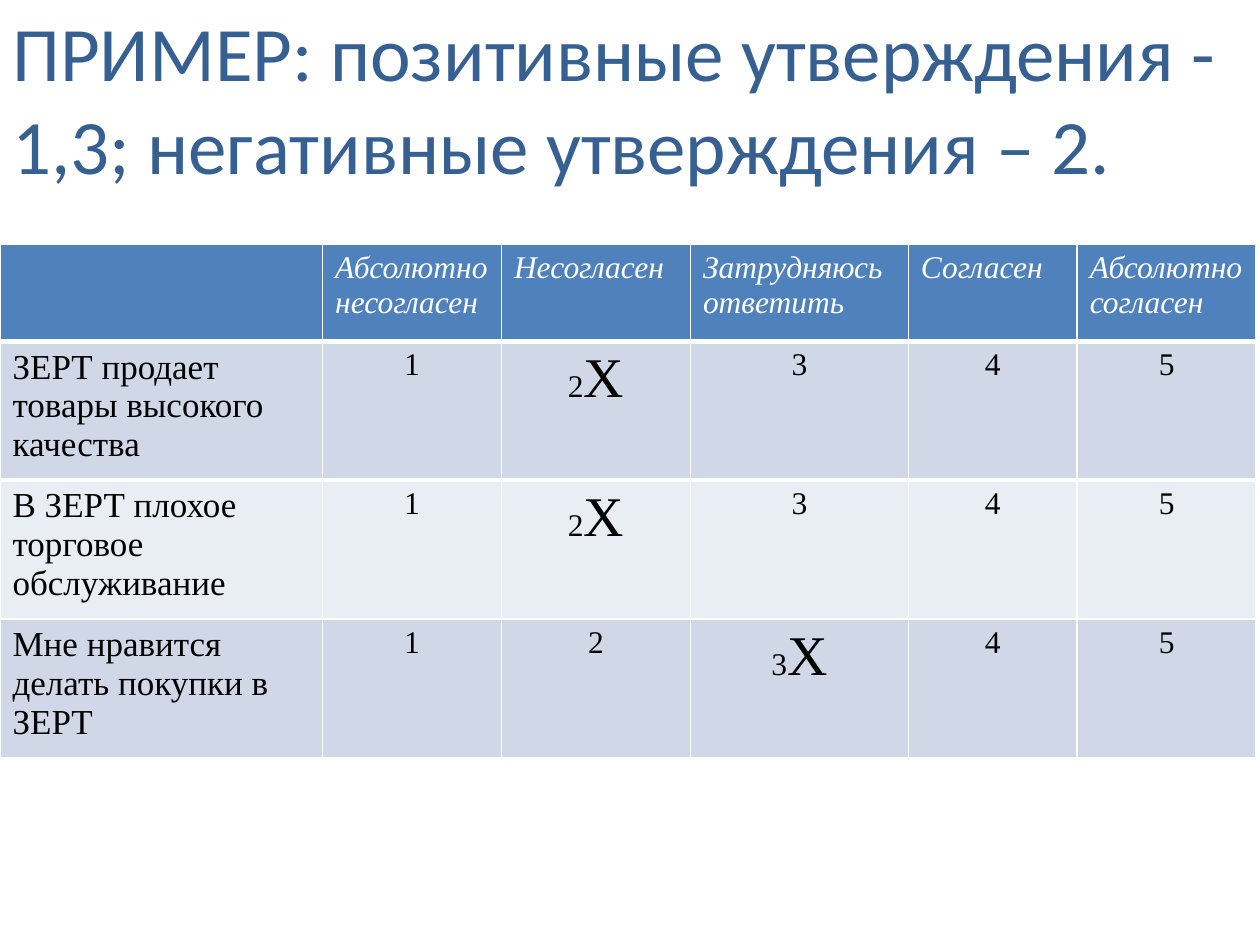
import lxml.etree
import pptx
import pptx.dml.color
import pptx.enum.text
import pptx.oxml.ns
import pptx.util

Inches, Pt = pptx.util.Inches, pptx.util.Pt
RGBColor = pptx.dml.color.RGBColor
qn = pptx.oxml.ns.qn

TITLE_BLUE = RGBColor(0x37, 0x60, 0x92)
HEADER_BLUE = RGBColor(0x4F, 0x81, 0xBD)
BANDS = [RGBColor(0xD0, 0xD8, 0xE8), RGBColor(0xE9, 0xED, 0xF4)]
WHITE = RGBColor(0xFF, 0xFF, 0xFF)
BLACK = RGBColor(0x00, 0x00, 0x00)

COLUMN_WIDTHS = [2.56, 1.42, 1.5, 1.73, 1.34, 1.42]
ROW_HEIGHTS = [0.77, 1.1, 1.1, 1.1]

ANSWERS = ["Абсолютно несогласен", "Несогласен", "Затрудняюсь ответить",
           "Согласен", "Абсолютно согласен"]
# Each statement with the score that the respondent crossed
STATEMENTS = [
    ("ЗЕРТ продает товары высокого качества", 2),
    ("В ЗЕРТ плохое торговое обслуживание", 2),
    ("Мне нравится делать покупки в ЗЕРТ", 3),
]


def add_text(paragraph, text, size, color, italic=False):
    """Add a run with its own font, as the table style overrides paragraph fonts."""
    run = paragraph.add_run()
    run.text = text
    run.font.name = "Times New Roman"
    run.font.size = Pt(size)
    run.font.color.rgb = color
    run.font.bold = False
    run.font.italic = italic


def draw_edge(cell, side, width):
    """Draw a white edge on a cell; side is a tag such as a:lnB."""
    edge = lxml.etree.Element(qn(side), w=str(Pt(width)))
    paint = lxml.etree.SubElement(edge, qn("a:solidFill"))
    lxml.etree.SubElement(paint, qn("a:srgbClr"), val=str(WHITE))
    cell.fill.solid()
    cell._tc.get_or_add_tcPr().insert(0, edge)


deck = pptx.Presentation()
deck.slide_width, deck.slide_height = Inches(10), Inches(7.5)
slide = deck.slides.add_slide(deck.slide_layouts[6])

title = slide.shapes.add_textbox(
    0, Inches(-0.01), Inches(10.12), Inches(1.58)).text_frame
title.word_wrap = True
title.auto_size = pptx.enum.text.MSO_AUTO_SIZE.SHAPE_TO_FIT_TEXT
heading = title.paragraphs[0]
heading.text = "ПРИМЕР: позитивные утверждения - 1,3; негативные утверждения – 2."
heading.font.name = "Calibri"
heading.font.size = Pt(44)
heading.font.color.rgb = TITLE_BLUE

survey = slide.shapes.add_table(
    len(ROW_HEIGHTS), len(COLUMN_WIDTHS), 0, Inches(1.94),
    Inches(sum(COLUMN_WIDTHS)), Inches(sum(ROW_HEIGHTS))).table
for column, width in zip(survey.columns, COLUMN_WIDTHS):
    column.width = Inches(width)
for row, height in zip(survey.rows, ROW_HEIGHTS):
    row.height = Inches(height)

for index, answer in enumerate(["", *ANSWERS]):
    header = survey.cell(0, index)
    draw_edge(header, "a:lnB", 3)
    draw_edge(survey.cell(1, index), "a:lnT", 3)
    header.fill.fore_color.rgb = HEADER_BLUE
    if answer:
        add_text(header.text_frame.paragraphs[0], answer, 18, WHITE, italic=True)

for index, (statement, crossed) in enumerate(STATEMENTS):
    for score in range(len(ANSWERS) + 1):
        cell = survey.cell(index + 1, score)
        cell.fill.solid()
        cell.fill.fore_color.rgb = BANDS[index % 2]
        entry = cell.text_frame.paragraphs[0]
        if score == 0:
            add_text(entry, statement, 20, BLACK)
            continue
        entry.alignment = pptx.enum.text.PP_ALIGN.CENTER
        add_text(entry, str(score), 18, BLACK)
        if score == crossed:
            add_text(entry, "X", 32, BLACK)

deck.save("out.pptx")
